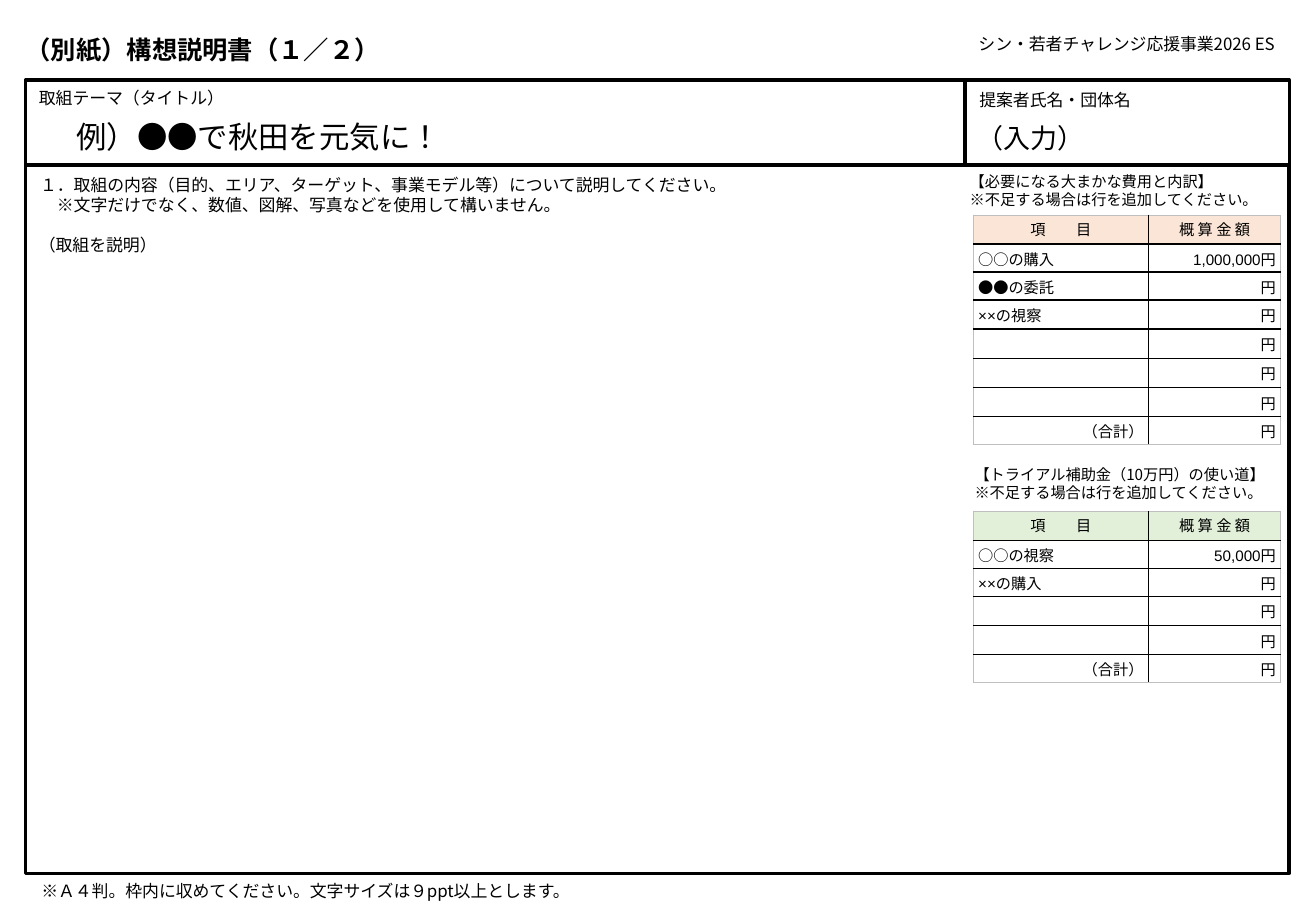
from lxml import etree
from pptx import Presentation
from pptx.dml.color import RGBColor
from pptx.enum import lang, shapes, text
from pptx.oxml import ns
from pptx.util import Inches, Pt

BLACK = RGBColor(0, 0, 0)
WHITE = RGBColor(255, 255, 255)
GRAY = RGBColor(0xBF, 0xBF, 0xBF)
PEACH = RGBColor(0xFB, 0xE5, 0xD6)
GREEN = RGBColor(0xE2, 0xF0, 0xD9)
NOTO = "Noto Sans CJK JP"
LEFT, MID, RIGHT = text.PP_ALIGN.LEFT, text.PP_ALIGN.CENTER, text.PP_ALIGN.RIGHT


def write(frame, lines, size, face=NOTO, align=LEFT, bold=False):
    for i, line in enumerate(lines):
        para = frame.add_paragraph() if i else frame.paragraphs[0]
        para.alignment = align
        para.line_spacing = Pt(size * 1.2)
        para.space_before = Pt(0)
        if not line:
            # Keeps an empty cell as low as a filled one
            end = etree.SubElement(para._p, ns.qn("a:endParaRPr"))
            end.set("sz", str(size * 100))
            continue
        run = para.add_run()
        run.text = line
        form = {"size": Pt(size), "bold": bold, "name": face,
                "language_id": lang.MSO_LANGUAGE_ID.JAPANESE}
        for key, val in form.items():
            setattr(run.font, key, val)
        run.font.color.rgb = BLACK
        east = etree.SubElement(run.font._element, ns.qn("a:ea"))
        east.set("typeface", NOTO)


def edge(cell, side, color, width):
    line = etree.SubElement(cell._tc.get_or_add_tcPr(), ns.qn("a:ln" + side))
    line.set("w", str(Pt(width)))
    fill = etree.SubElement(line, ns.qn("a:solidFill"))
    etree.SubElement(fill, ns.qn("a:srgbClr")).set("val", str(color))


prs = Presentation()
prs.slide_width, prs.slide_height = Inches(10.83), Inches(7.5)
slide = prs.slides.add_slide(prs.slide_layouts[5])

# Title
title = slide.shapes.title
title.left, title.top, title.width, title.height = map(Inches, (0.21, 0.22, 5.2, 0.37))
frame = title.text_frame
form = {"margin_left": 0, "margin_right": 0, "margin_top": 0, "margin_bottom": 0,
        "vertical_anchor": text.MSO_ANCHOR.MIDDLE, "auto_size": text.MSO_AUTO_SIZE.NONE}
for key, val in form.items():
    setattr(frame, key, val)
write(frame, ["（別紙）構想説明書（１／２）"], 15, bold=True)

# Frames: theme, body, proposer
for spot in [(0.21, 0.66, 7.73, 0.7), (0.21, 1.36, 10.4, 5.83), (7.94, 0.66, 2.67, 0.7)]:
    rect = slide.shapes.add_shape(shapes.MSO_SHAPE.RECTANGLE, *map(Inches, spot))
    rect.shadow.inherit = False
    rect.fill.background()
    rect.line.color.rgb = BLACK
    rect.line.width = Pt(2)

# Labels: place, side and top margins, size, font, alignment, lines
WIDE, SLIM, BASE = (0.12, 0.06), (0.04, 0.04), (0.1, 0.05)
MORE = "※不足する場合は行を追加してください。"
labels = [
    ((0.2, 0.66, 2.02, 0.29), WIDE, 10, NOTO, LEFT, ["取組テーマ（タイトル）"]),
    ((0.53, 0.92, 4.33, 0.4), BASE, 18, NOTO, LEFT, ["例）●●で秋田を元気に！"]),
    ((7.94, 0.68, 1.53, 0.29), WIDE, 10, NOTO, LEFT, ["提案者氏名・団体名"]),
    ((7.94, 0.95, 2.67, 0.37), BASE, 16, NOTO, LEFT, ["（入力）"]),
    ((6.91, 0.22, 3.7, 0.29), WIDE, 10, NOTO, RIGHT, ["シン・若者チャレンジ応援事業2026 ES"]),
    ((0.21, 1.38, 7.66, 0.46), WIDE, 10, NOTO, LEFT,
     ["１．取組の内容（目的、エリア、ターゲット、事業モデル等）について説明してください。",
      "　※文字だけでなく、数値、図解、写真などを使用して構いません。"]),
    ((0.28, 1.89, 7.66, 0.25), SLIM, 10, "Arial", LEFT, ["（取組を説明）"]),
    ((7.94, 1.38, 2.6, 0.38), SLIM, 9, NOTO, LEFT, ["【必要になる大まかな費用と内訳】", MORE]),
    ((7.98, 3.79, 2.6, 0.38), SLIM, 9, NOTO, LEFT, ["【トライアル補助金（10万円）の使い道】", MORE]),
    ((0.22, 7.19, 4.8, 0.29), WIDE, 10, NOTO, LEFT,
     ["※Ａ４判。枠内に収めてください。文字サイズは９ppt以上とします。"]),
]
for spot, (side, top), size, face, align, lines in labels:
    frame = slide.shapes.add_textbox(*map(Inches, spot)).text_frame
    frame.word_wrap = True
    frame.margin_left = frame.margin_right = Inches(side)
    frame.margin_top = frame.margin_bottom = Inches(top)
    write(frame, lines, size, face, align)

# Cost tables: place, header colour, items, first amount
tables = [
    ((8.01, 1.77, 2.53, 1.9), PEACH, ["○○の購入", "●●の委託", "××の視察", "", "", ""], "1,000,000円"),
    ((8.01, 4.21, 2.53, 1.42), GREEN, ["○○の視察", "××の購入", "", ""], "50,000円"),
]
for spot, tint, items, cost in tables:
    rows = [("項　　目", "概 算 金 額")]
    rows += [(item, "円" if i else cost) for i, item in enumerate(items)]
    rows += [("（合計）", "円")]
    last = len(rows) - 1
    grid = slide.shapes.add_table(len(rows), 2, *map(Inches, spot)).table
    grid.first_row = grid.horz_banding = False
    grid.columns[0].width, grid.columns[1].width = Inches(1.44), Inches(1.09)
    for r, row in enumerate(rows):
        grid.rows[r].height = Inches(0.23 if r in (1, 2, last) else 0.24)
        for c, word in enumerate(row):
            cell = grid.cell(r, c)
            outer = {"L": c == 0, "R": c == 1, "T": r == 0, "B": r == last}
            for side, rim in outer.items():
                edge(cell, side, GRAY if rim else BLACK, 0.5 if rim else 1)
            cell.fill.solid()
            cell.fill.fore_color.rgb = WHITE if r else tint
            cell.vertical_anchor = text.MSO_ANCHOR.MIDDLE
            cell.margin_left = cell.margin_right = Inches(0.04)
            cell.margin_top = Inches(0.06 if r else 0.05)
            cell.margin_bottom = Inches(0.02 if r else 0.03)
            align = MID if r == 0 else RIGHT if c or r == last else LEFT
            write(cell.text_frame, [word], 9, "Arial" if r else NOTO, align)

prs.save("out.pptx")
